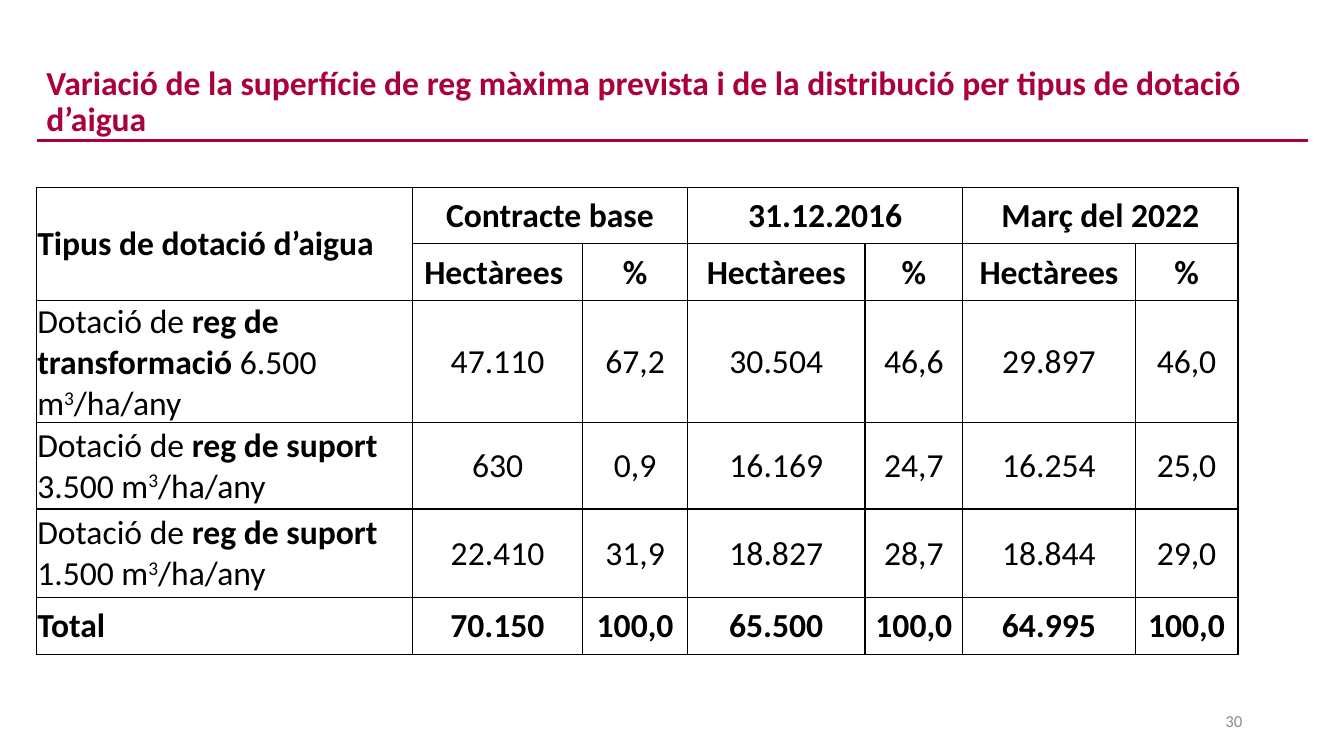
from lxml.etree import SubElement
from pptx import Presentation
from pptx.dml.color import RGBColor
from pptx.enum.shapes import MSO_CONNECTOR as Connector
from pptx.enum.text import MSO_ANCHOR as Anchor, MSO_AUTO_SIZE as AutoSize, PP_ALIGN as Align
from pptx.oxml.ns import qn
from pptx.util import Pt

PX = 9144
FONT = "Calibri"
COLORS = {"accent": "AB003E", "text": "000000", "muted": "8C8C8C", "background": "FFFFFF"}
COLUMNS = [373, 169, 104, 176, 97, 171, 102]
ROWS = [56, 56, 116, 86, 88, 56]
PERIODS = ["Contracte base", "31.12.2016", "Març del 2022"]
UNITS = ["Hectàrees ", "%", "Hectàrees", "%", "Hectàrees", "%"]
ALLOCATIONS = [
    ("reg de transformació ", "6.500", ["47.110", "67,2", "30.504", "46,6", "29.897", "46,0"]),
    ("reg de suport ", "3.500", ["630", "0,9", "16.169", "24,7", "16.254", "25,0"]),
    ("reg de suport ", "1.500", ["22.410", "31,9", "18.827", "28,7", "18.844", "29,0"]),
]
TOTALS = ["70.150", "100,0", "65.500", "100,0", "64.995", "100,0"]


def px(*lengths):
    """Convert pixel lengths to EMU."""
    return [length * PX for length in lengths]


def color(name):
    """Look up a colour by its role."""
    return RGBColor.from_string(COLORS[name])


def add_run(paragraph, words, size=24, tint="text", bold=False, raised=False):
    """Append one formatted run."""
    run = paragraph.add_run()
    run.text = words
    font = run.font
    font.name, font.size, font.bold = FONT, Pt(size), bold
    font.color.rgb = color(tint)
    if raised:
        run._r.get_or_add_rPr().set("baseline", "30000")


def add_heading(slide, words):
    """Place the title and the rule below it."""
    heading = slide.shapes.title
    heading.left, heading.top, heading.width, heading.height = px(36, 70, 1260, 64)
    frame = heading.text_frame
    frame.auto_size, frame.word_wrap = AutoSize.NONE, True
    frame.vertical_anchor = Anchor.MIDDLE
    paragraph = frame.paragraphs[0]
    paragraph.alignment, paragraph.line_spacing = Align.LEFT, 0.9
    add_run(paragraph, words, tint="accent", bold=True)
    rule = slide.shapes.add_connector(Connector.STRAIGHT, *px(37, 139, 1297, 139))
    rule.line.color.rgb = color("accent")
    rule.line.width = Pt(2.25)
    SubElement(rule._element.spPr, qn("a:effectLst"))


def add_page_number(slide, number):
    """Place the page number at the lower right."""
    frame = slide.shapes.add_textbox(*px(942, 695, 300, 40)).text_frame
    frame.word_wrap, frame.vertical_anchor = True, Anchor.MIDDLE
    paragraph = frame.paragraphs[0]
    paragraph.alignment = Align.RIGHT
    add_run(paragraph, number, size=12, tint="muted")


def style_cell(cell):
    """Give a cell thin borders, tight margins and a plain fill."""
    properties = cell._tc.get_or_add_tcPr()
    for side in ("a:lnL", "a:lnR", "a:lnT", "a:lnB"):
        border = SubElement(properties, qn(side), w=str(Pt(1)))
        fill = SubElement(border, qn("a:solidFill"))
        SubElement(fill, qn("a:srgbClr"), val=COLORS["text"])
    cell.fill.solid()
    cell.fill.fore_color.rgb = color("background")
    cell.margin_left, cell.margin_right, cell.margin_top, cell.margin_bottom = px(1, 1, 1, 0)
    cell.vertical_anchor = Anchor.MIDDLE


def fill_values(table, row, values, bold=False, step=1):
    """Write centred values along a row, after the label column."""
    for index, value in enumerate(values):
        paragraph = table.cell(row, 1 + index * step).text_frame.paragraphs[0]
        paragraph.alignment = Align.CENTER
        add_run(paragraph, value, bold=bold)


def fill_label(table, row, runs):
    """Write the label of a row from runs of words and formats."""
    paragraph = table.cell(row, 0).text_frame.paragraphs[0]
    for words, style in runs:
        add_run(paragraph, words, **style)


def add_allocation_table(slide):
    """Build the table of irrigated area by water allocation."""
    table = slide.shapes.add_table(
        len(ROWS), len(COLUMNS), *px(36, 186, sum(COLUMNS), sum(ROWS))).table
    table.first_row = table.horz_banding = False
    for column, width in zip(table.columns, COLUMNS):
        column.width = width * PX
    for row, height in zip(table.rows, ROWS):
        row.height = height * PX
    for cell in table.iter_cells():
        style_cell(cell)
    table.cell(0, 0).merge(table.cell(1, 0))
    for first in range(1, len(COLUMNS), 2):
        table.cell(0, first).merge(table.cell(0, first + 1))

    bold = {"bold": True}
    fill_label(table, 0, [("Tipus de dotació d’aigua", bold)])
    fill_values(table, 0, PERIODS, bold=True, step=2)
    fill_values(table, 1, UNITS, bold=True)
    for row, (kind, volume, values) in enumerate(ALLOCATIONS, start=2):
        fill_label(table, row, [("Dotació de ", {}), (kind, bold), (f"{volume} m", {}),
                                ("3", {"raised": True}), ("/ha/any", {})])
        fill_values(table, row, values)
    fill_label(table, len(ROWS) - 1, [("Total", bold)])
    fill_values(table, len(ROWS) - 1, TOTALS, bold=True)


def main():
    """Build and save the slide."""
    deck = Presentation()
    deck.slide_width, deck.slide_height = px(1333, 750)
    slide = deck.slides.add_slide(deck.slide_layouts[5])
    add_heading(slide, "Variació de la superfície de reg màxima prevista i de la "
                       "distribució per tipus de dotació d’aigua")
    add_page_number(slide, "30")
    add_allocation_table(slide)
    deck.save("out.pptx")


if __name__ == "__main__":
    main()
